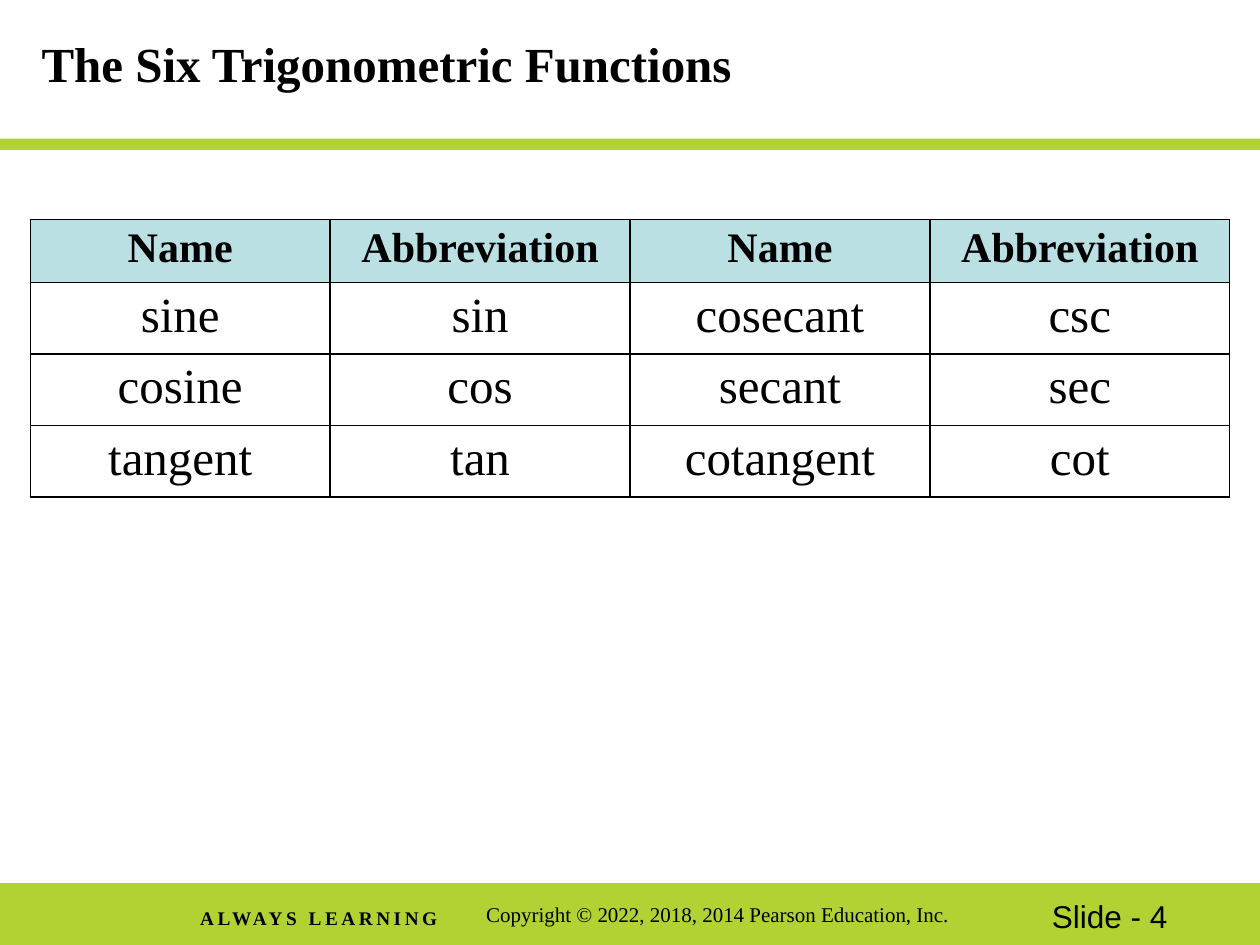
import pptx
import pptx.util
import pptx.dml.color
import pptx.enum.shapes
import pptx.enum.text
import pptx.oxml
import pptx.oxml.ns

Inches, Pt = pptx.util.Inches, pptx.util.Pt
ALIGN = pptx.enum.text.PP_ALIGN
GREEN, BLUE, BLACK = "B2D234", "BBE0E3", "000000"
SERIF = "Times New Roman"


def paint(fill, color):
    """Make a fill solid in a hex colour."""
    fill.solid()
    fill.fore_color.rgb = pptx.dml.color.RGBColor.from_string(color)


def write(frame, text, size, bold=False, face=SERIF, align=ALIGN.LEFT):
    """Add one black run to the first paragraph and return it."""
    para = frame.paragraphs[0]
    para.alignment = align
    run = para.add_run()
    run.text = text
    run.font.size, run.font.bold, run.font.name = Pt(size), bold, face
    paint(run.font.fill, BLACK)
    return run


deck = pptx.Presentation()
deck.slide_width, deck.slide_height = Inches(10), Inches(7.5)
slide = deck.slides.add_slide(deck.slide_layouts[5])
shapes = slide.shapes

# Green bands
for top, height in [(7.01, 0.5), (1.1, 0.09)]:
    band = shapes.add_shape(pptx.enum.shapes.MSO_SHAPE.RECTANGLE,
                            0, Inches(top), Inches(10), Inches(height))
    band.shadow.inherit = False
    paint(band.fill, GREEN)
    band.line.fill.background()

# Footer
footer = [
    ("Copyright © 2022, 2018, 2014 Pearson Education, Inc.",
     (3.76, 7.11, 3.89, 0.3), 12, False, SERIF, 0),
    ("Slide - 4", (8.25, 7.07, 1.5, 0.4), 18, False, "Arial", 0),
    ("ALWAYS LEARNING", (1.49, 7.14, 2.32, 0.29), 11, True, SERIF, 2),
]
for text, place, size, bold, face, space in footer:
    box = shapes.add_textbox(*map(Inches, place))
    box.text_frame.word_wrap = True
    run = write(box.text_frame, text, size, bold, face)
    if space:
        run._r.get_or_add_rPr().set("spc", str(space * 100))

# Title
title = shapes.title
title.left, title.top = Inches(0.23), Inches(0)
title.width, title.height = Inches(9.52), Inches(1.09)
frame = title.text_frame
frame.auto_size = pptx.enum.text.MSO_AUTO_SIZE.NONE
frame.vertical_anchor = pptx.enum.text.MSO_ANCHOR.MIDDLE
frame.paragraphs[0].line_spacing = 0.8
write(frame, "The Six Trigonometric Functions", 28, True)

# Function table
rows = [
    ("Name", "Abbreviation", "Name", "Abbreviation"),
    ("sine", "sin", "cosecant", "csc"),
    ("cosine", "cos", "secant", "sec"),
    ("tangent", "tan", "cotangent", "cot"),
]
table = shapes.add_table(4, 4, Inches(0.24), Inches(1.74),
                         Inches(9.52), Inches(1.64)).table
table.horz_banding = False
for col in table.columns:
    col.width = Inches(2.38)
for r, names in enumerate(rows):
    table.rows[r].height = Inches(0.41)
    head = r == 0
    for c, name in enumerate(names):
        cell = table.cell(r, c)
        write(cell.text_frame, name, 24 if head else 28, head,
              align=ALIGN.CENTER)
        props = cell._tc.get_or_add_tcPr()
        for side in ("lnL", "lnR", "lnT", "lnB"):
            props.append(pptx.oxml.parse_xml(
                f'<a:{side} {pptx.oxml.ns.nsdecls("a")} w="{Pt(1)}">'
                f'<a:solidFill><a:srgbClr val="{BLACK}"/></a:solidFill>'
                f'</a:{side}>'))
        if head:
            paint(cell.fill, BLUE)
        else:
            cell.fill.background()

deck.save("out.pptx")
